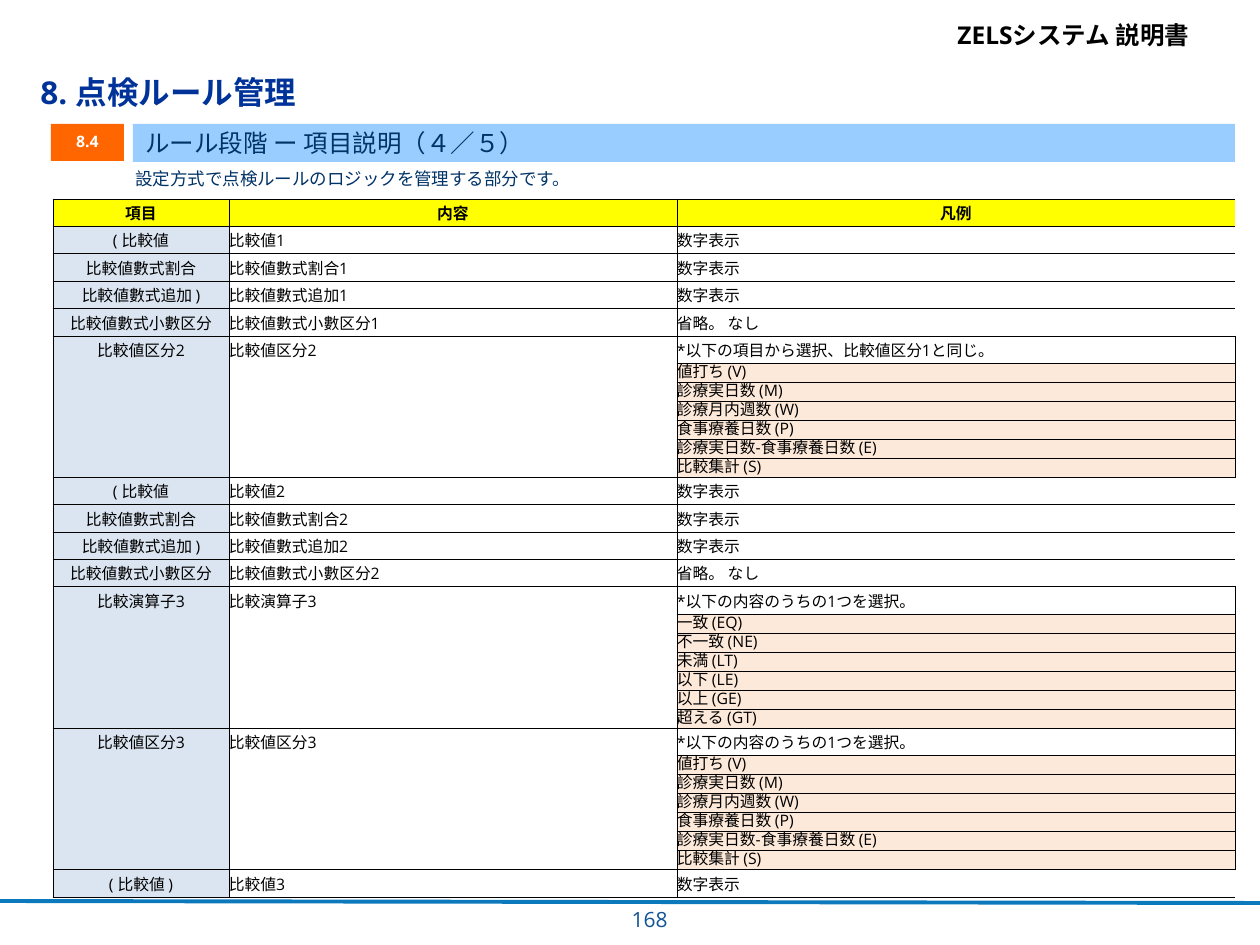
import pptx
import pptx.dml.color
import pptx.enum.shapes
import pptx.enum.text
import pptx.oxml.ns
import pptx.util
from lxml import etree

UNIT = 914400 / 126
BLACK, WHITE, NAVY = "000000", "FFFFFF", "003366"
LABEL, ITEM, HEAD = "DBE5F1", "FDE9D9", "FFFF00"
ALIGN = pptx.enum.text.PP_ALIGN
ANCHOR = pptx.enum.text.MSO_ANCHOR
NUM = "数字表示"
PICK = "*以下の内容のうちの1つを選択。"
KINDS = ["値打ち (V)", "診療実日数 (M)", "診療月内週数 (W)", "食事療養日数 (P)",
         "診療実日数-食事療養日数 (E)", "比較集計 (S)"]
TESTS = ["一致 (EQ)", "不一致 (NE)", "未満 (LT)", "以下 (LE)", "以上 (GE)", "超える (GT)"]


def px(size):
    """Turn px into EMU."""
    return pptx.util.Emu(round(size * UNIT))


def tint(code):
    """Turn a hex string into a colour."""
    return pptx.dml.color.RGBColor.from_string(code)


def tag(name):
    """Give the full name of a drawing element."""
    return pptx.oxml.ns.qn("a:" + name)


def write(para, text, size, color=BLACK, bold=False, align=ALIGN.LEFT, face="Noto Sans CJK JP"):
    """Add one run to a paragraph."""
    para.alignment = align
    run = para.add_run()
    run.text = text
    font = run.font
    font.size, font.bold = pptx.util.Pt(size), bold
    font.color.rgb = tint(color)
    font.name = "Open Sans"
    etree.SubElement(font._element, tag("ea")).set("typeface", face)


def block(slide, box, text, size, color, fill=None, anchor=ANCHOR.MIDDLE, wrap=True,
          pad=6, lead=None, **look):
    """Place a text box or a filled bar holding one line."""
    spot = [px(n) for n in box]
    if fill:
        shape = slide.shapes.add_shape(pptx.enum.shapes.MSO_SHAPE.RECTANGLE, *spot)
        shape.shadow.inherit = False
        shape.fill.solid()
        shape.fill.fore_color.rgb = tint(fill)
        shape.line.fill.background()
    else:
        shape = slide.shapes.add_textbox(*spot)
    frame = shape.text_frame
    frame.word_wrap, frame.vertical_anchor = wrap, anchor
    frame.margin_top = frame.margin_bottom = px(pad)
    para = frame.paragraphs[0]
    if lead:
        para.line_spacing = lead
    write(para, text, size, color, **look)


def edge(cell, sides):
    """Draw thin black borders on the named sides of a cell and clear the others."""
    props = cell._tc.get_or_add_tcPr()
    for spot, side in enumerate("LRTB"):
        line = etree.Element(tag("ln" + side), w=str(pptx.util.Pt(0.5)))
        if side in sides:
            paint = etree.SubElement(line, tag("solidFill"))
            etree.SubElement(paint, tag("srgbClr"), val=BLACK)
        else:
            etree.SubElement(line, tag("noFill"))
        props.insert(spot, line)


def fill_cell(cell, text, fill, sides, bold=False, align=ALIGN.LEFT, lead=None):
    """Fill one table cell."""
    cell.fill.solid()
    cell.fill.fore_color.rgb = tint(fill)
    edge(cell, sides)
    cell.margin_left = cell.margin_right = cell.margin_top = cell.margin_bottom = 0
    cell.vertical_anchor = ANCHOR.MIDDLE
    para = cell.text_frame.paragraphs[0]
    if text:
        if lead:
            para.line_spacing = pptx.util.Pt(lead)
        write(para, text, 9, bold=bold, align=align)
    else:
        para._p.get_or_add_endParaRPr().set("sz", "600")


def values(num):
    """List the four value rows of a numbered set."""
    names = ["比較値", "比較値數式割合", "比較値數式追加", "比較値數式小數区分"]
    labels = ["( 比較値", names[1], names[2] + " )", names[3]]
    notes = [NUM, NUM, NUM, "省略。 なし"]
    return [(label, f"{name}{num}", note, []) for label, name, note in zip(labels, names, notes)]


def grid(slide, box):
    """Build the table of items."""
    left, top, wide, tall = box
    groups = (values(1)
              + [("比較値区分2", "比較値区分2", "*以下の項目から選択、比較値区分1と同じ。", KINDS)]
              + values(2)
              + [("比較演算子3", "比較演算子3", PICK, TESTS),
                 ("比較値区分3", "比較値区分3", PICK, KINDS),
                 ("( 比較値 )", "比較値3", NUM, [])])
    subs = sum(len(group[3]) for group in groups)
    mains = len(groups) + 1
    small = 19
    big = (tall - subs * small) / mains
    frame = slide.shapes.add_table(mains + subs, 3, px(left), px(top), px(wide), px(tall))
    table = frame.table
    table.first_row = table.horz_banding = False
    style = table._tbl.tblPr.find(tag("tableStyleId"))
    style.text = "{2D5ABB26-0587-4C30-8999-92F81FD0307C}"
    for col, size in zip(table.columns, (176, 448, wide - 624)):
        col.width = px(size)
    for row in table.rows:
        row.height = px(big)
    for col, text in enumerate(("項目", "内容", "凡例")):
        sides = "LTB" if col == 2 else "LRTB"
        fill_cell(table.cell(0, col), text, HEAD, sides, bold=True, align=ALIGN.CENTER)
    row = 1
    for label, name, note, items in groups:
        sides = "LRT" if items else "LRTB"
        fill_cell(table.cell(row, 0), label, LABEL, sides, align=ALIGN.CENTER)
        fill_cell(table.cell(row, 1), name, WHITE, sides)
        fill_cell(table.cell(row, 2), note, WHITE, "LRTB" if items else "LTB")
        row += 1
        for item in items:
            sides = "LRB" if item == items[-1] else "LR"
            table.rows[row].height = px(small)
            fill_cell(table.cell(row, 0), "", LABEL, sides)
            fill_cell(table.cell(row, 1), "", WHITE, sides)
            fill_cell(table.cell(row, 2), item, ITEM, "LRTB", lead=10.8)
            row += 1


def footer(slide, box):
    """Draw the bottom rule and the page number."""
    left, top, wide, tall = box
    rule = slide.shapes.add_connector(pptx.enum.shapes.MSO_CONNECTOR.STRAIGHT,
                                      px(left), px(top), px(left + wide), px(top + 2))
    rule.line.color.rgb = tint("0C79BC")
    rule.line.width = pptx.util.Pt(2.25)
    etree.SubElement(rule._element.spPr, tag("effectLst"))
    block(slide, (left + 613, top, 67, tall), "168", 12, "125496", anchor=ANCHOR.TOP,
          align=ALIGN.RIGHT, face="Open Sans")


def header(slide, box):
    """Place the manual name and the chapter title."""
    left, top, wide, tall = box
    block(slide, (left + 917, top, 272, 43), "ZELSシステム 説明書", 14, BLACK, wrap=False, bold=True)
    block(slide, (left, top + tall - 53, wide, 53), "8. 点検ルール管理", 18, "003399",
          anchor=ANCHOR.TOP, pad=0, lead=0.95, bold=True)


def section(slide, box):
    """Place the section number, its bar and the lead sentence."""
    left, top, wide, tall = box
    block(slide, (left + 72, top + 37, wide - 97, tall - 38),
          "設定方式で点検ルールのロジックを管理する部分です。", 10, NAVY, fill=WHITE, wrap=False)
    block(slide, (left, top, 73, 37), "8.4", 9, WHITE, fill="FF6600", lead=0.95,
          bold=True, align=ALIGN.CENTER)
    block(slide, (left + 82, top, wide - 82, 38), "ルール段階 ー 項目説明（４／５）", 14, NAVY,
          fill="99CCFF")


def main():
    """Build and save the slide."""
    deck = pptx.Presentation()
    deck.slide_width, deck.slide_height = px(1260), px(945)
    slide = deck.slides.add_slide(deck.slide_layouts[6])
    footer(slide, (0, 901, 1260, 35))
    header(slide, (28, 13, 1227, 116))
    grid(slide, (53, 199, 1182, 698))
    section(slide, (51, 124, 1184, 72))
    deck.save("out.pptx")


if __name__ == "__main__":
    main()
